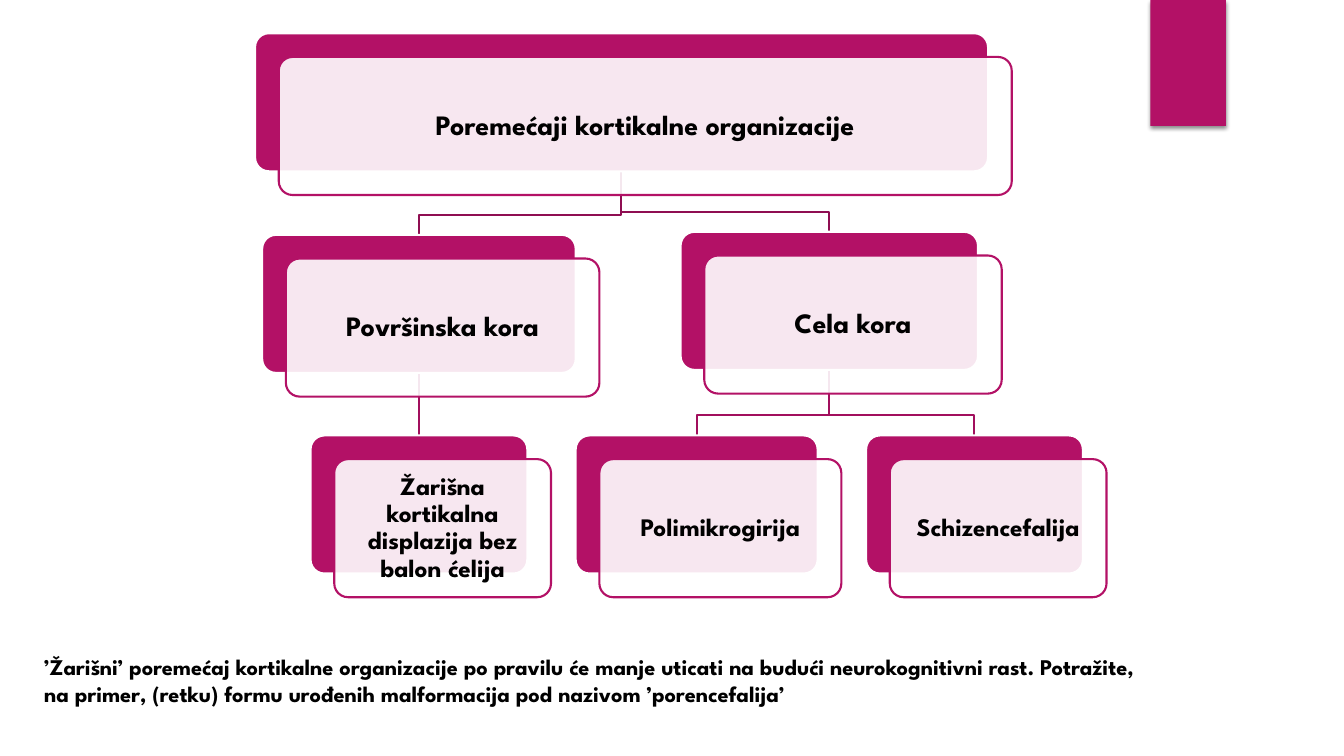
from lxml import etree
from pptx import Presentation
from pptx.dml.color import RGBColor
from pptx.enum.shapes import MSO_CONNECTOR, MSO_SHAPE
from pptx.enum.text import MSO_ANCHOR, PP_ALIGN
from pptx.oxml import parse_xml
from pptx.oxml.ns import nsdecls, qn
from pptx.util import Inches, Pt

RECT, ROUNDED = MSO_SHAPE.RECTANGLE, MSO_SHAPE.ROUNDED_RECTANGLE
STRAIGHT = MSO_CONNECTOR.STRAIGHT
CENTER, LEFT = PP_ALIGN.CENTER, PP_ALIGN.LEFT
MIDDLE, TOP = MSO_ANCHOR.MIDDLE, MSO_ANCHOR.TOP

MAGENTA = RGBColor(0xB3, 0x11, 0x66)
UPPER_LINK = RGBColor(0x8F, 0x0E, 0x52)
LOWER_LINK = RGBColor(0xA2, 0x0F, 0x5D)
WHITE = RGBColor(0xFF, 0xFF, 0xFF)
BLACK = RGBColor(0, 0, 0)

FONT = "League Spartan"
LINE_WIDTH = Pt(1.5)
CARD_HEIGHT = 1.37
CARD_OFFSET = 0.235   # shift of the front card from the back card
LINK_DROP = 0.2       # height of the last leg above a child card

# key: (left, top, width, text size, inset, text)
CARDS = {
    "organization": (2.53, 0.33, 7.27, 20, 0.08, "Poremećaji kortikalne organizacije"),
    "surface": (2.6, 2.33, 3.11, 20, 0.08, "Površinska kora"),
    "dysplasia": (3.08, 4.32, 2.15, 18, 0.07,
                  "Žarišna kortikalna displazija bez balon ćelija"),
    "whole": (6.75, 2.3, 2.95, 20, 0.08, "Cela kora"),
    "polymicrogyria": (5.71, 4.32, 2.4, 18, 0.07, "Polimikrogirija"),
    "schizencephaly": (8.59, 4.32, 2.15, 18, 0.06, "Schizencefalija"),
}
LINKS = [
    ("whole", "schizencephaly", LOWER_LINK),
    ("whole", "polymicrogyria", LOWER_LINK),
    ("organization", "whole", UPPER_LINK),
    ("surface", "dysplasia", LOWER_LINK),
    ("organization", "surface", UPPER_LINK),
]
NOTE = ("’Žarišni’ poremećaj kortikalne organizacije po pravilu će manje uticati "
        "na budući neurokognitivni rast. Potražite, na primer, (retku) formu "
        "urođenih malformacija pod nazivom ’porencefalija’")


def write_text(shape, text, size, align, anchor, spacing):
    frame = shape.text_frame
    frame.word_wrap = True
    frame.vertical_anchor = anchor
    paragraph = frame.paragraphs[0]
    paragraph.text = text
    paragraph.alignment = align
    paragraph.line_spacing = spacing
    for name, value in {"name": FONT, "size": Pt(size), "bold": True}.items():
        setattr(paragraph.font, name, value)
    paragraph.font.color.rgb = BLACK
    return frame


def add_corner_bar(slide, left, top, width, height):
    bar = slide.shapes.add_shape(RECT, *map(Inches, (left, top, width, height)))
    bar.fill.solid()
    bar.fill.fore_color.rgb = MAGENTA
    bar.line.fill.background()
    bar._element.spPr.append(parse_xml(
        f'<a:effectLst {nsdecls("a")}>'
        f'<a:outerShdw blurRad="{Pt(3)}" dist="{Pt(2)}" dir="5400000" rotWithShape="0">'
        '<a:srgbClr val="000000"><a:alpha val="45000"/></a:srgbClr>'
        '</a:outerShdw></a:effectLst>'))


def add_link(slide, parent, child, color):
    parent_left, parent_top, parent_width = CARDS[parent][:3]
    child_left, child_top, child_width = CARDS[child][:3]
    start_x = round(parent_left + parent_width / 2, 2)
    end_x = round(child_left + child_width / 2, 2)
    start_y = parent_top + CARD_HEIGHT
    bend_y = child_top - LINK_DROP
    if abs(start_x - end_x) < 0.02:
        link = slide.shapes.add_connector(
            STRAIGHT, *map(Inches, (end_x, start_y, end_x, child_top)))
        etree.SubElement(link._element.spPr, qn("a:effectLst"))
    else:
        builder = slide.shapes.build_freeform(Inches(start_x), Inches(start_y))
        corners = [(start_x, bend_y), (end_x, bend_y), (end_x, child_top)]
        builder.add_line_segments(
            [(Inches(x), Inches(y)) for x, y in corners], close=False)
        link = builder.convert_to_shape()
        link.fill.background()
        link.shadow.inherit = False
    link.line.color.rgb = color
    link.line.width = LINE_WIDTH


def add_card(slide, left, top, width, size, inset, text):
    # Solid back card, then the translucent front card with the text
    for shift, fill, outline in ((0, MAGENTA, WHITE), (CARD_OFFSET, WHITE, MAGENTA)):
        card = slide.shapes.add_shape(
            ROUNDED, *map(Inches, (left + shift, top + shift, width, CARD_HEIGHT)))
        card.adjustments[0] = 0.1
        card.fill.solid()
        card.fill.fore_color.rgb = fill
        card.line.color.rgb = outline
        card.line.width = LINE_WIDTH
        card.shadow.inherit = False
    front_color = card._element.spPr.find(qn("a:solidFill"))[0]
    etree.SubElement(front_color, qn("a:alpha"), val="90000")
    frame = write_text(card, text, size, CENTER, MIDDLE, 0.9)
    for side in ("left", "top", "right", "bottom"):
        setattr(frame, f"margin_{side}", Inches(inset))


def add_note(slide, left, top, width, height):
    note = slide.shapes.add_textbox(*map(Inches, (left, top, width, height)))
    write_text(note, NOTE, 16, LEFT, TOP, 1.0)


def main():
    presentation = Presentation()
    presentation.slide_width = Inches(13.33)
    presentation.slide_height = Inches(7.5)
    slide = presentation.slides.add_slide(presentation.slide_layouts[6])

    add_corner_bar(slide, 11.41, 0, 0.75, 1.25)
    add_note(slide, 0.34, 6.43, 11.2, 0.64)
    # Links lie behind the cards
    for parent, child, color in LINKS:
        add_link(slide, parent, child, color)
    for card in CARDS.values():
        add_card(slide, *card)

    presentation.save("out.pptx")


if __name__ == "__main__":
    main()
